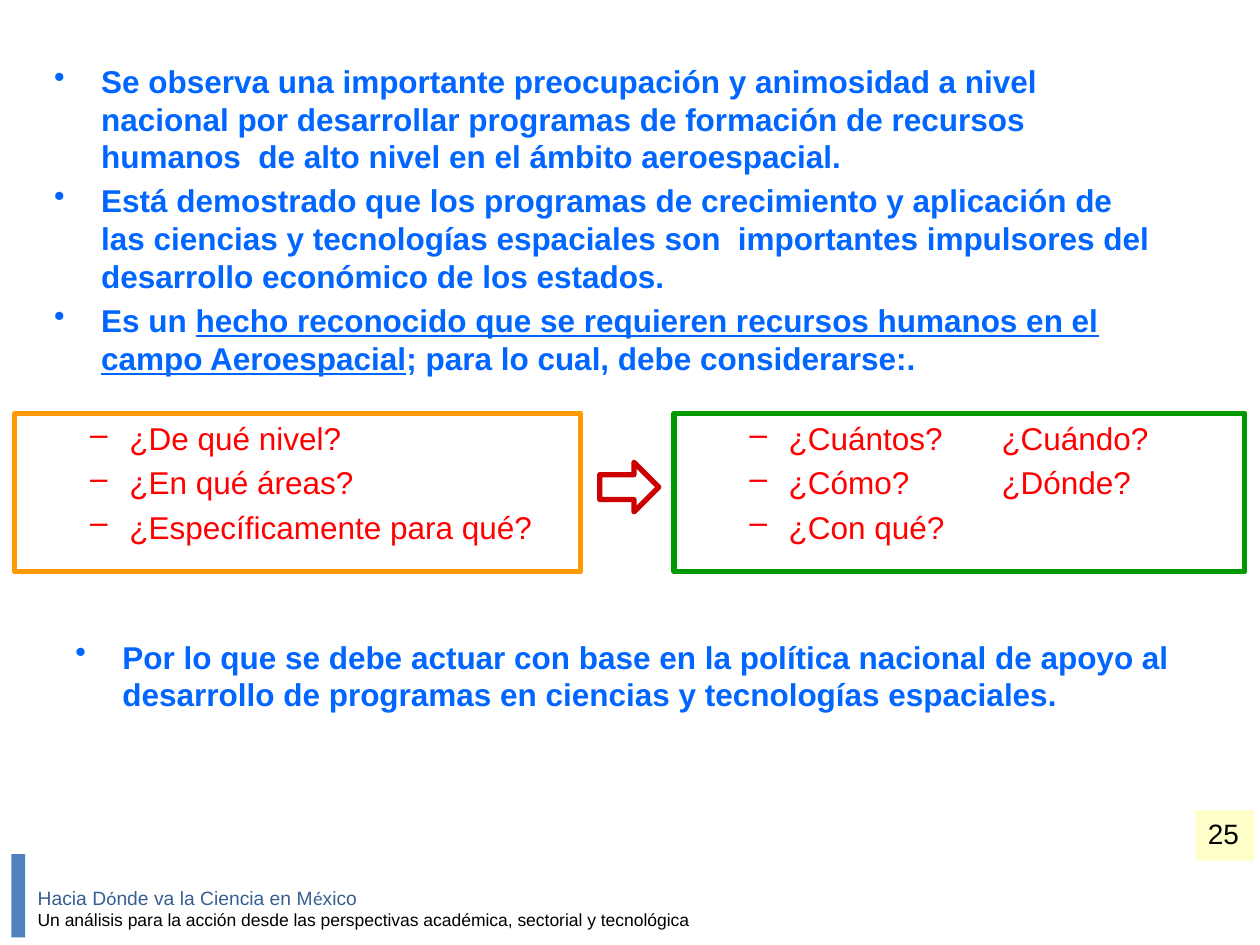
"""Build the slide on training people for the aerospace field."""
import pptx
import pptx.dml.color
import pptx.enum.shapes
import pptx.enum.text
import pptx.util
from lxml import etree

Cm, Pt = pptx.util.Cm, pptx.util.Pt
MSO = pptx.enum.shapes.MSO_SHAPE
ANCHOR = pptx.enum.text.MSO_ANCHOR

BLUE, RED = "0066FF", "FF0000"
FINDINGS = [
    ["Se observa una importante preocupación y animosidad a nivel nacional por desarrollar "
     "programas de formación de recursos humanos  de alto nivel en el ámbito aeroespacial."],
    ["Está demostrado que los programas de crecimiento y aplicación de las ciencias y tecnologías "
     "espaciales son  importantes impulsores del desarrollo económico de los estados."],
    ["Es un ",
     "hecho reconocido que se requieren recursos humanos en el campo Aeroespacial",
     "; para lo cual, debe considerarse:."],
]
CONCLUSION = [
    ["Por lo que se debe actuar con base en la política nacional de apoyo al desarrollo de "
     "programas en ciencias y tecnologías espaciales."],
]
QUESTIONS = [
    (0.3, 11.4, "FF9900", [["¿De qué nivel?"], ["¿En qué áreas?"], ["¿Específicamente para qué?"]]),
    (13.59, 11.5, "009900", [["¿Cuántos?\t¿Cuándo?"], ["¿Cómo?\t\t¿Dónde?"], ["¿Con qué?"]]),
]
FOOTER = [
    (["Hacia D", "ó", "nde va la Ciencia en M", "é", "xico"], 11, "365F91"),
    (["Un análisis para la acción desde las perspectivas académica, sectorial y tecnológica"],
     10, "000000"),
]
PAGE = "25"


def rgb(color):
    return pptx.dml.color.RGBColor.from_string(color)


def add_box(s, kind, at, fill=None, line=None):
    sp = s.shapes.add_shape(kind, *map(Cm, at))
    sp.shadow.inherit = False
    if fill:
        sp.fill.solid()
        sp.fill.fore_color.rgb = rgb(fill)
    else:
        sp.fill.background()
    if line:
        sp.line.color.rgb = rgb(line)
        sp.line.width = Pt(3)
    else:
        sp.line.fill.background()
    return sp


def add_text(s, at):
    sp = s.shapes.add_textbox(*map(Cm, at))
    sp.text_frame.word_wrap = True
    return sp


def add_paragraph(tf, i, texts, size, color, bold=False):
    p = tf.paragraphs[0] if i == 0 else tf.add_paragraph()
    p.alignment = pptx.enum.text.PP_ALIGN.LEFT
    for text in texts:
        r = p.add_run()
        r.text = text
        r.font.name, r.font.size, r.font.bold = "Arial", Pt(size), bold
        r.font.color.rgb = rgb(color)
    return p


def add_list(sp, items, mark, left, hang, color, bold=False):
    tf = sp.text_frame
    tf.vertical_anchor = ANCHOR.TOP
    for i, texts in enumerate(items):
        p = add_paragraph(tf, i, texts, 18, color, bold)
        if i:
            p.space_before = Pt(3.6)
        pPr = p._p.get_or_add_pPr()
        pPr.set("marL", str(Cm(left)))
        pPr.set("indent", str(-Cm(hang)))
        etree.SubElement(pPr, pptx.oxml.ns.qn("a:buChar")).set("char", mark)


def main():
    prs = pptx.Presentation()
    prs.slide_width, prs.slide_height = Cm(25.4), Cm(19.05)
    s = prs.slides.add_slide(prs.slide_layouts[6])

    add_box(s, MSO.RECTANGLE, (0.23, 17.22, 0.28, 1.68), fill="4F81BD")
    tf = add_text(s, (0.51, 17.73, 24.89, 1.14)).text_frame
    tf.vertical_anchor = ANCHOR.MIDDLE
    for i, (texts, size, color) in enumerate(FOOTER):
        p = add_paragraph(tf, i, texts, size, color)
        for r in p.runs[1::2]:
            r.font.name = "Calibri"

    findings = add_text(s, (0.84, 1.12, 22.86, 7.19))
    add_list(findings, FINDINGS, "•", 0.95, 0.95, BLUE, True)
    findings.text_frame.paragraphs[-1].runs[1].font.underline = True

    for left, width, color, items in QUESTIONS:
        sp = add_box(s, MSO.RECTANGLE, (left, 8.33, width, 3.2), line=color)
        add_list(sp, items, "–", 2.06, 0.79, RED)
    add_box(s, MSO.RIGHT_ARROW, (12.09, 9.32, 1.19, 1), line="CC0000")

    conclusion = add_text(s, (1.27, 12.73, 22.86, 2.01))
    add_list(conclusion, CONCLUSION, "•", 0.95, 0.95, BLUE, True)

    page = add_box(s, MSO.RECTANGLE, (24.1, 16.33, 1.19, 1.02), fill="FFFFCC")
    page.text_frame.vertical_anchor = ANCHOR.TOP
    add_paragraph(page.text_frame, 0, [PAGE], 16, "000000")

    prs.save("out.pptx")


if __name__ == "__main__":
    main()
